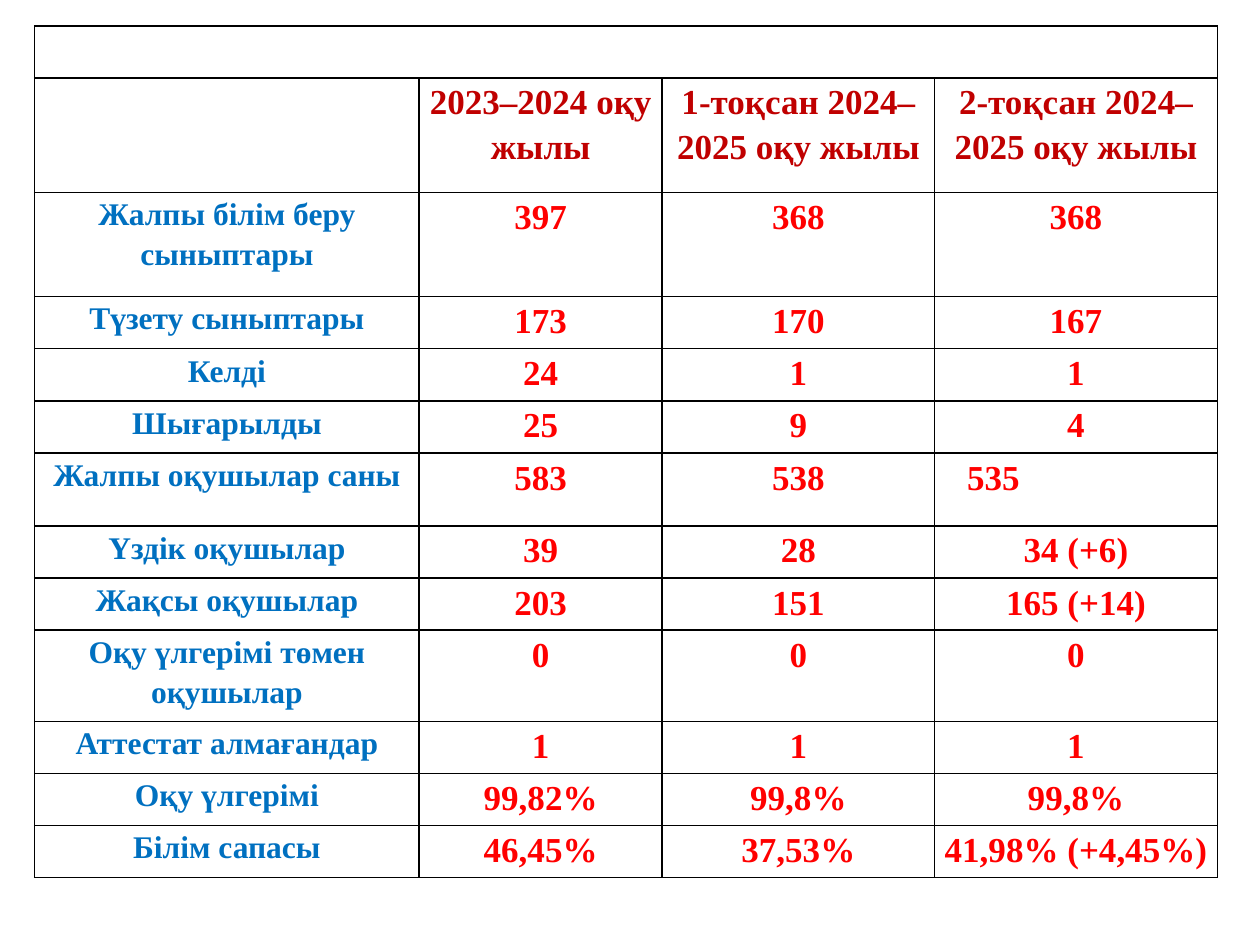
from dataclasses import dataclass

import lxml.etree
import pptx
import pptx.dml.color
import pptx.enum.text
import pptx.oxml.ns
import pptx.table
import pptx.util

Cm = pptx.util.Cm
Pt = pptx.util.Pt


@dataclass(frozen=True)
class Theme:
    font: str = "Times New Roman"
    header_color: str = "C00000"
    label_color: str = "0070C0"
    value_color: str = "FF0000"
    border_color: str = "000000"
    label_size: int = 18
    value_size: int = 20
    border_width: int = 1
    line_spacing: float = 1.15
    side_margin: float = 0.17


@dataclass(frozen=True)
class Indicator:
    label: str
    values: tuple[str, str, str]
    height: float = 1.05


THEME = Theme()
COLUMN_WIDTHS = (7.75, 4.9, 5.49, 5.7)
BANNER_HEIGHT, PERIOD_HEIGHT = 1.05, 2.31
PERIODS = ("2023–2024 оқу жылы", "1-тоқсан 2024–2025 оқу жылы", "2-тоқсан 2024–2025 оқу жылы")
TOTAL_LABEL = "Жалпы оқушылар саны"
TOTAL_RIGHT_MARGIN = 3.5

INDICATORS = (
    Indicator("Жалпы білім беру сыныптары", ("397", "368", "368"), 2.1),
    Indicator("Түзету сыныптары", ("173", "170", "167")),
    Indicator("Келді", ("24", "1", "1")),
    Indicator("Шығарылды", ("25", "9", "4")),
    Indicator(TOTAL_LABEL, ("583", "538", "535"), 1.47),
    Indicator("Үздік оқушылар", ("39", "28", "34 (+6)")),
    Indicator("Жақсы оқушылар", ("203", "151", "165 (+14)")),
    Indicator("Оқу үлгерімі төмен оқушылар", ("0", "0", "0"), 1.84),
    Indicator("Аттестат алмағандар", ("1", "1", "1")),
    Indicator("Оқу үлгерімі", ("99,82%", "99,8%", "99,8%")),
    Indicator("Білім сапасы", ("46,45%", "37,53%", "41,98% (+4,45%)")),
)


def apply_format(target: object, values: dict) -> None:
    for name, value in values.items():
        setattr(target, name, value)


def style_cell(cell: pptx.table._Cell) -> None:
    """Plain cell: solid borders on every side, no fill, no vertical margins."""
    qn = pptx.oxml.ns.qn
    properties = cell._tc.get_or_add_tcPr()
    for side in ("lnL", "lnR", "lnT", "lnB"):
        line = lxml.etree.SubElement(properties, qn(f"a:{side}"), w=str(Pt(THEME.border_width)))
        solid = lxml.etree.SubElement(line, qn("a:solidFill"))
        lxml.etree.SubElement(solid, qn("a:srgbClr"), val=THEME.border_color)
    cell.fill.background()
    apply_format(cell, {
        "margin_left": Cm(THEME.side_margin), "margin_right": Cm(THEME.side_margin),
        "margin_top": 0, "margin_bottom": 0,
    })


def write_cell(cell: pptx.table._Cell, text: str, size: int, color: str) -> None:
    paragraph = cell.text_frame.paragraphs[0]
    apply_format(paragraph, {
        "alignment": pptx.enum.text.PP_ALIGN.CENTER,
        "line_spacing": THEME.line_spacing,
    })
    run = paragraph.add_run()
    run.text = text
    apply_format(run.font, {"name": THEME.font, "size": Pt(size), "bold": True})
    run.font.color.rgb = pptx.dml.color.RGBColor.from_string(color)


def main() -> None:
    presentation = pptx.Presentation()
    apply_format(presentation, {"slide_width": Cm(25.4), "slide_height": Cm(19.05)})
    slide = presentation.slides.add_slide(presentation.slide_layouts[6])

    # Table grid
    row_heights = [BANNER_HEIGHT, PERIOD_HEIGHT] + [item.height for item in INDICATORS]
    results = slide.shapes.add_table(
        len(row_heights), len(COLUMN_WIDTHS), Cm(0.7), Cm(0.52),
        Cm(sum(COLUMN_WIDTHS)), Cm(sum(row_heights)),
    ).table
    apply_format(results, {"first_row": False, "horz_banding": False})
    for column, width in zip(results.columns, COLUMN_WIDTHS):
        column.width = Cm(width)
    for row, height in zip(results.rows, row_heights):
        row.height = Cm(height)
        for cell in row.cells:
            style_cell(cell)

    # Empty banner and period headings
    results.cell(0, 0).merge(results.cell(0, len(COLUMN_WIDTHS) - 1))
    for column, period in enumerate(PERIODS, start=1):
        write_cell(results.cell(1, column), period, THEME.value_size, THEME.header_color)

    # Indicators
    for row, item in enumerate(INDICATORS, start=2):
        write_cell(results.cell(row, 0), item.label, THEME.label_size, THEME.label_color)
        for column, value in enumerate(item.values, start=1):
            write_cell(results.cell(row, column), value, THEME.value_size, THEME.value_color)
        if item.label == TOTAL_LABEL:
            # The latest total sits left of the column centre
            results.cell(row, len(item.values)).margin_right = Cm(TOTAL_RIGHT_MARGIN)

    presentation.save("out.pptx")


if __name__ == "__main__":
    main()
